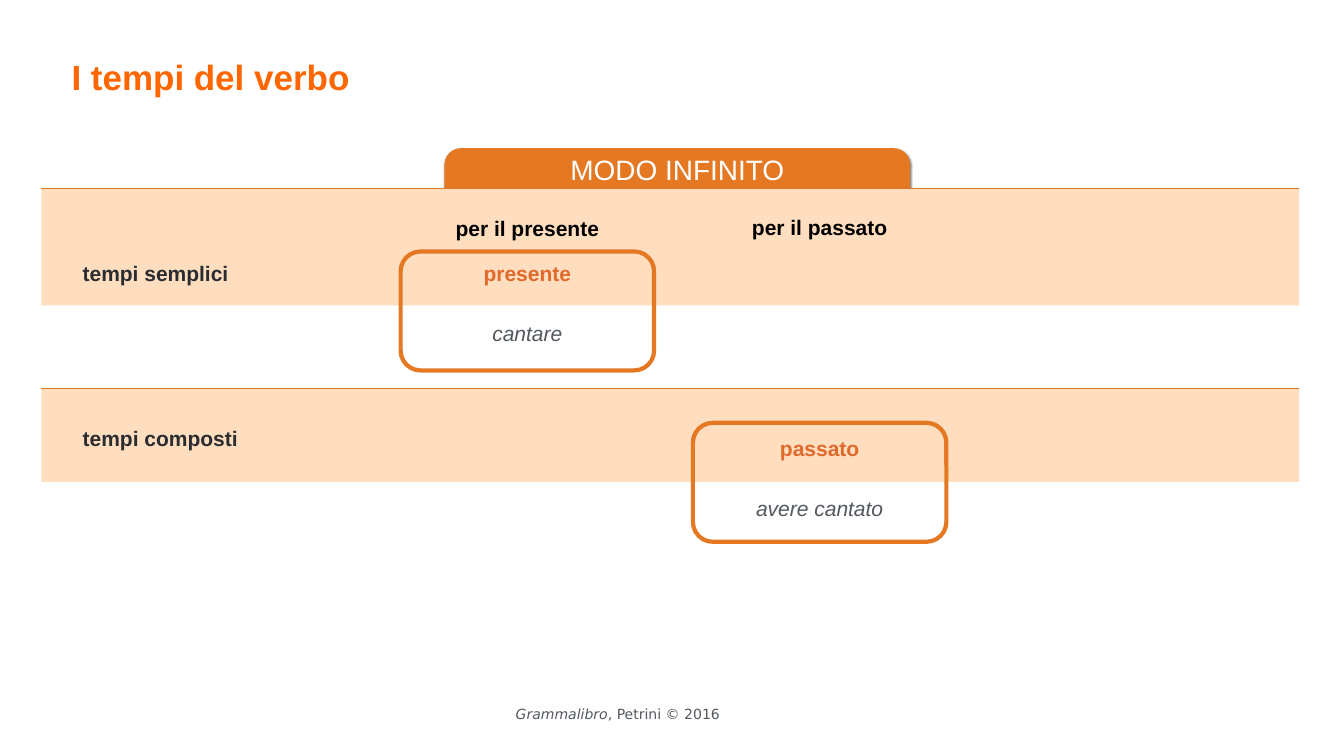
from lxml.etree import SubElement
from pptx import Presentation
from pptx.dml.color import RGBColor
from pptx.enum.shapes import MSO_CONNECTOR, MSO_SHAPE
from pptx.enum.text import MSO_ANCHOR, MSO_AUTO_SIZE, PP_ALIGN
from pptx.oxml import parse_xml
from pptx.oxml.ns import nsdecls, qn
from pptx.util import Inches, Pt

# Content
TITLE = "I tempi del verbo"
MOOD = "MODO INFINITO"
HEADS = [("per il presente", 0, 4.12), ("per il passato", 1, 4.11)]
BANDS = [  # label, label top, label width, colour, band top, band height
    ("tempi semplici", 5.02, 3.67, "292C30", 3.74, 2.32),
    ("tempi composti", 8.3, 4.61, "2A2C2F", 7.71, 1.85),
]
TENSES = [  # tense, example, column, text top, frame top
    ("presente", "cantare", 0, 5.01, 4.99),
    ("passato", "avere cantato", 1, 8.48, 8.39),
]
FOOTER = [("Grammalibro", True), (", Petrini © 2016", False)]

# Style and grid
ORANGE, PEACH, RUST, GREY = "E47823", "FFDDBF", "E0692C", "53585F"
COLS, COL_W = [7.95, 13.75], 5.03
LEFT, WIDTH = 0.82, 24.96
TAB_X, TAB_W = 8.82, 9.24
PAD = 0.06


def color(code):
    return RGBColor.from_string(code)


def shape(kind, x, y, w, h, fill=None, line=None):
    item = slide.shapes.add_shape(kind, Inches(x), Inches(y), Inches(w), Inches(h))
    item.shadow.inherit = False
    if fill:
        item.fill.solid()
        item.fill.fore_color.rgb = color(fill)
    else:
        item.fill.background()
    if line:
        item.line.color.rgb = color(line)
        item.line.width = Pt(6)
    else:
        item.line.fill.background()
    return item


def rule(y):
    item = slide.shapes.add_connector(
        MSO_CONNECTOR.STRAIGHT, Inches(LEFT), Inches(y), Inches(LEFT + WIDTH), Inches(y))
    item.line.color.rgb = color(ORANGE)
    item.line.width = Pt(2)
    SubElement(item._element.spPr, qn("a:effectLst"))


def setup(frame, wrap=True):
    frame.word_wrap = wrap
    frame.auto_size = MSO_AUTO_SIZE.NONE
    frame.vertical_anchor = MSO_ANCHOR.MIDDLE
    frame.margin_left = frame.margin_right = Inches(PAD)
    frame.margin_top = frame.margin_bottom = Inches(PAD)


def box(x, y, w, h, wrap=True):
    frame = slide.shapes.add_textbox(Inches(x), Inches(y), Inches(w), Inches(h)).text_frame
    setup(frame, wrap)
    return frame


def write(para, text, size, code, bold=False, italic=False, face="Arial",
          align=PP_ALIGN.CENTER, space=1.2):
    para.alignment = align
    para.line_spacing = space
    run = para.add_run()
    run.text = text
    font = run.font
    font.name, font.size = face, Pt(size)
    font.bold, font.italic = bold, italic
    font.color.rgb = color(code)


deck = Presentation()
deck.slide_width, deck.slide_height = Inches(26.67), Inches(15)
slide = deck.slides.add_slide(deck.slide_layouts[5])

# Title
title = slide.shapes.title
title.left, title.top = Inches(1.36), Inches(0.97)
title.width, title.height = Inches(10.26), Inches(1.02)
setup(title.text_frame)
write(title.text_frame.paragraphs[0], TITLE, 50, "FF6600", bold=True,
      align=PP_ALIGN.LEFT, space=1.1)

# Tab with a soft shadow, its foot hidden by the first band
tab = shape(MSO_SHAPE.ROUNDED_RECTANGLE, TAB_X, 2.94, TAB_W, 1.97, ORANGE)
tab.adjustments[0] = 0.165
effects = tab._element.spPr.find(qn("a:effectLst"))
effects.append(parse_xml(
    f'<a:outerShdw {nsdecls("a")} blurRad="{Pt(3)}" dist="{Pt(2)}" dir="5400000">'
    '<a:srgbClr val="000000"><a:alpha val="50000"/></a:srgbClr></a:outerShdw>'))

# Bands with their rules and labels
for label, y, w, code, top, high in BANDS:
    shape(MSO_SHAPE.RECTANGLE, LEFT, top, WIDTH, high, PEACH)
    rule(top)
    write(box(1.58, y, w, 0.7).paragraphs[0], label, 30, code, bold=True,
          align=PP_ALIGN.LEFT)

# Tab text
mood = box(TAB_X, 2.91, TAB_W, 0.83)
mood.vertical_anchor = MSO_ANCHOR.TOP
mood.margin_top = Inches(0.05)
write(mood.paragraphs[0], MOOD, 40, "FFFFFF", space=1.1)

# Column heads
for text, col, y in HEADS:
    write(box(COLS[col], y, COL_W, 0.7).paragraphs[0], text, 30, "000000", bold=True)

# Tenses, each with an example and a frame
for tense, sample, col, y, top in TENSES:
    frame = box(COLS[col], y, COL_W, 1.91)
    write(frame.paragraphs[0], tense, 30, RUST, bold=True)
    para = frame.add_paragraph()
    para.space_before = Pt(42)
    write(para, sample, 30, GREY, italic=True)
    shape(MSO_SHAPE.ROUNDED_RECTANGLE, COLS[col], top, COL_W, 2.36, line=ORANGE)

# Footer
para = box(10.1, 14.03, 4.32, 0.36, wrap=False).paragraphs[0]
for text, italic in FOOTER:
    write(para, text, 20, GREY, italic=italic, face="DejaVu Sans", space=0.7)

deck.save("out.pptx")
